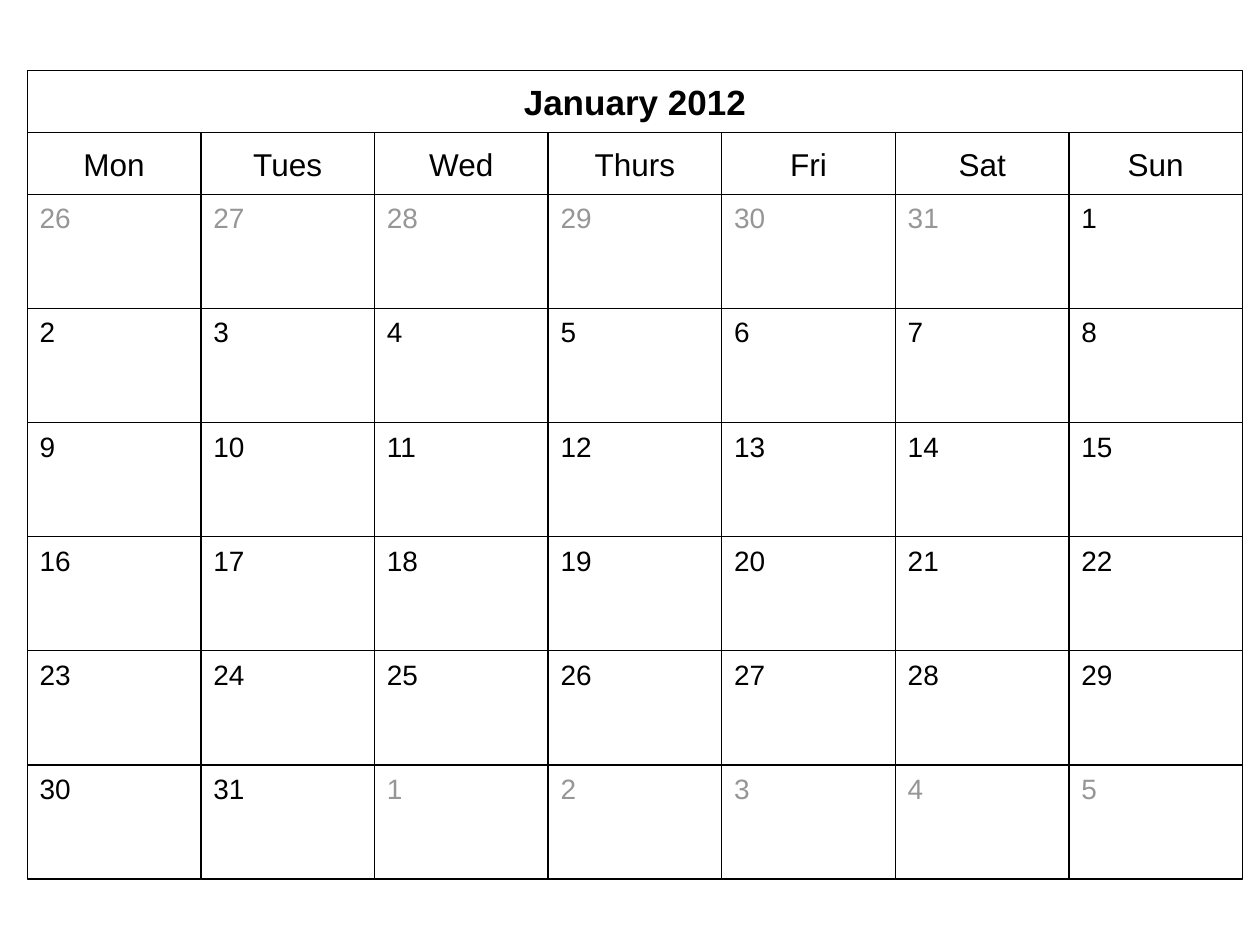
"""Build a one-slide monthly calendar for January 2012."""
from pptx import Presentation
from pptx import util as u
from pptx.dml import color
from pptx.enum import shapes, text

COLORS = {"paper": "FFFFFF", "ink": "000000", "other_month": "969696"}
LEFT, TOP = 0.55, 1.42
DAY_WIDTH, HEADER_HEIGHT, WEEK_HEIGHT = 3.5, 1.25, 2.3
WEEKDAYS = ["Mon", "Tues", "Wed", "Thurs", "Fri", "Sat", "Sun"]
DATES = [*range(26, 32), *range(1, 32), *range(1, 6)]
FIRST_OF_MONTH, LAST_OF_MONTH = 6, 36


def place(shape, left, top, width, height):
    shape.left, shape.top = u.Cm(left), u.Cm(top)
    shape.width, shape.height = u.Cm(width), u.Cm(height)


def format_cell(shape, words, size, ink="ink", bold=False, header=True):
    if header:
        shape.fill.solid()
        shape.fill.fore_color.rgb = color.RGBColor.from_string(COLORS["paper"])
    else:
        shape.fill.background()
    shape.line.color.rgb = color.RGBColor.from_string(COLORS["ink"])
    shape.line.width = u.Pt(0.75)
    frame = shape.text_frame
    frame.word_wrap = True
    frame.auto_size = text.MSO_AUTO_SIZE.NONE
    frame.vertical_anchor = text.MSO_ANCHOR.MIDDLE if header else text.MSO_ANCHOR.TOP
    frame.margin_left = frame.margin_right = u.Cm(0.25)
    frame.margin_top = frame.margin_bottom = u.Cm(0.05 if header else 0.13)
    paragraph = frame.paragraphs[0]
    paragraph.alignment = text.PP_ALIGN.CENTER if header else text.PP_ALIGN.LEFT
    run = paragraph.add_run()
    run.text = words
    run.font.name = "Arial"
    run.font.size = u.Pt(size)
    run.font.bold = bold
    run.font.color.rgb = color.RGBColor.from_string(COLORS[ink])


presentation = Presentation()
presentation.slide_width = u.Cm(25.4)
presentation.slide_height = u.Cm(19.05)
slide = presentation.slides.add_slide(presentation.slide_layouts[5])

title = slide.shapes.title
place(title, LEFT, TOP, 7 * DAY_WIDTH, HEADER_HEIGHT)
format_cell(title, "January 2012", 20, bold=True)

for column, weekday in enumerate(WEEKDAYS):
    shape = slide.shapes.add_shape(shapes.MSO_SHAPE.RECTANGLE, 0, 0, 0, 0)
    shape.shadow.inherit = False
    place(shape, LEFT + column * DAY_WIDTH, TOP + HEADER_HEIGHT, DAY_WIDTH, HEADER_HEIGHT)
    format_cell(shape, weekday, 18)

for index, date in enumerate(DATES):
    week, column = divmod(index, 7)
    ink = "ink" if FIRST_OF_MONTH <= index <= LAST_OF_MONTH else "other_month"
    shape = slide.shapes.add_shape(shapes.MSO_SHAPE.RECTANGLE, 0, 0, 0, 0)
    shape.shadow.inherit = False
    top = TOP + 2 * HEADER_HEIGHT + week * WEEK_HEIGHT
    place(shape, LEFT + column * DAY_WIDTH, top, DAY_WIDTH, WEEK_HEIGHT)
    format_cell(shape, str(date), 16, ink, header=False)

presentation.save("out.pptx")
